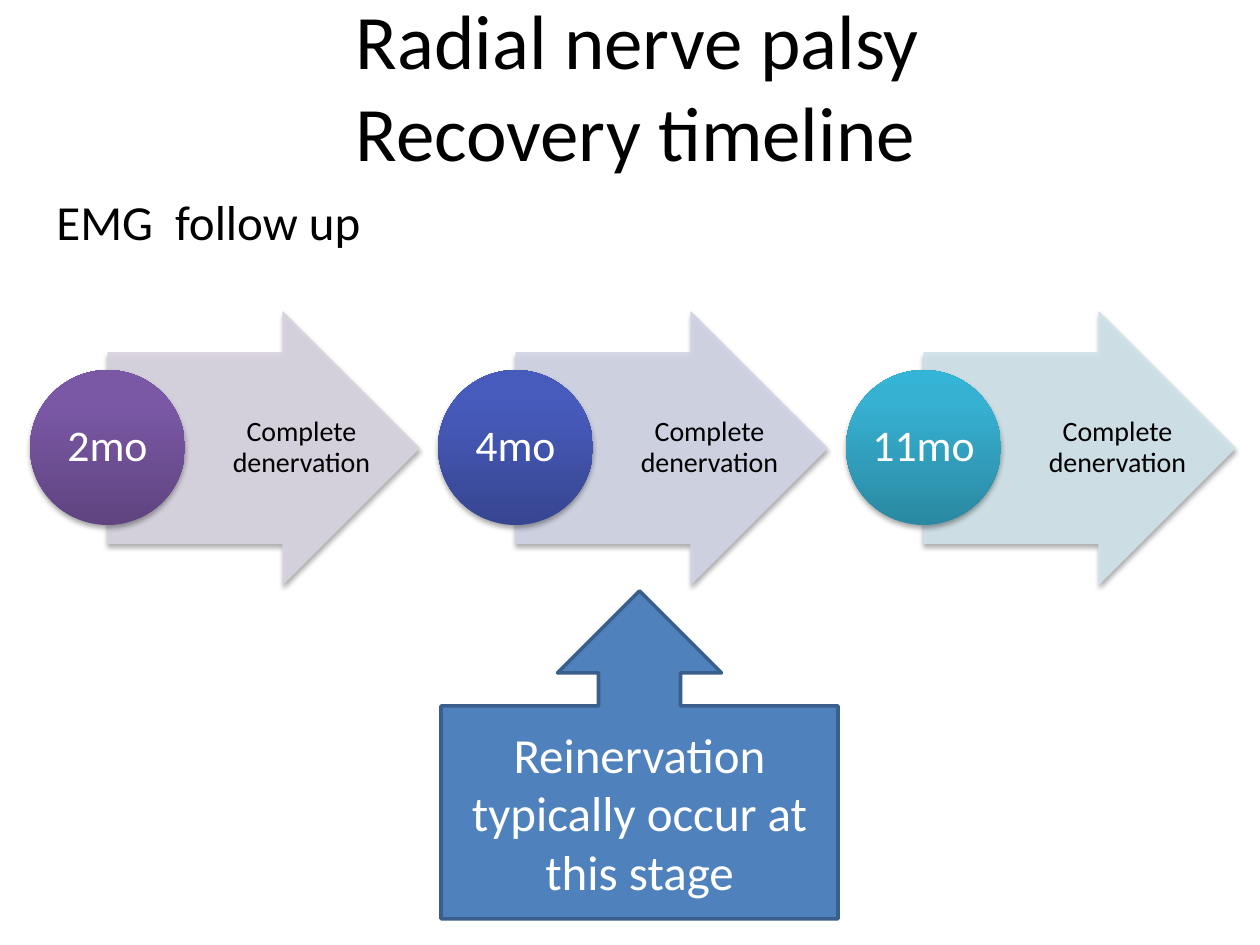
from dataclasses import dataclass
from lxml import etree
from pptx import Presentation
from pptx.dml.color import RGBColor as Rgb
from pptx.enum.shapes import MSO_SHAPE as Shape
from pptx.enum.text import MSO_ANCHOR as Anchor, MSO_AUTO_SIZE as AutoSize, PP_ALIGN as Align
from pptx.oxml import parse_xml
from pptx.util import Inches, Pt

PX = Inches(1) / 126
NS = 'xmlns:a="http://schemas.openxmlformats.org/drawingml/2006/main"'


@dataclass(frozen=True)
class Theme:
    font: str = "Calibri"
    dark: str = "000000"
    light: str = "FFFFFF"
    callout: str = "4F81BD"
    callout_edge: str = "3A5F8C"
    title: int = 44
    body: int = 28
    month: int = 25
    finding: int = 16


theme = Theme()
# month, finding, arrow colour, circle gradient from bottom to top
stages = [
    ("2mo", "Complete denervation", "D8D3E0", ("5F4480", "7B58A6", "7C57A8")),
    ("4mo", "Complete denervation", "D1D4E5", ("374691", "475BBC", "455ABF")),
    ("11mo", "Complete denervation", "D0E3EA", ("2A88A2", "37B1D2", "34B4D6")),
]


def px(*lengths):
    return [round(length * PX) for length in lengths]


def write(shape, text, size, color, align=Align.CENTER, anchor=Anchor.MIDDLE,
          wrap=True, inset=None, spacing=None):
    frame = shape.text_frame
    frame.text = text
    frame.word_wrap = wrap
    frame.auto_size = AutoSize.NONE
    frame.vertical_anchor = anchor
    if inset is not None:
        frame.margin_left = frame.margin_right = px(inset)[0]
        frame.margin_top = frame.margin_bottom = px(inset)[0]
    for para in frame.paragraphs:
        para.alignment = align
        para.line_spacing = spacing
        for span in para.runs:
            span.font.name = theme.font
            span.font.size = Pt(size)
            span.font.color.rgb = Rgb.from_string(color)


deck = Presentation()
deck.slide_width, deck.slide_height = Inches(10), Inches(7.5)
page = deck.slides.add_slide(deck.slide_layouts[5])
shapes = page.shapes

# Title
title = shapes.title
title.left, title.top, title.width, title.height = px(343, -14, 612, 199)
write(title, "Radial nerve palsy\nRecovery timeline", theme.title, theme.dark,
      Align.LEFT, Anchor.TOP, wrap=False)

# Timeline: an arrow, its finding and a month circle per stage
for index, (month, finding, pale, stops) in enumerate(stages):
    left = 30 + index * 408
    arrow = shapes.add_shape(Shape.RIGHT_ARROW, *px(left + 78, 312, 311, 272))
    arrow.adjustments[0], arrow.adjustments[1] = 0.7, 0.5
    arrow.fill.solid()
    arrow.fill.fore_color.rgb = Rgb.from_string(pale)
    arrow.line.color.rgb = Rgb.from_string(pale)
    arrow.line.width = Pt(0.75)
    for color in arrow.element.spPr.iter("{*}srgbClr"):
        color.append(parse_xml(f'<a:alpha {NS} val="90000"/>'))

    label = shapes.add_textbox(*px(left + 155, 312, 233, 272))
    write(label, finding, theme.finding, theme.dark, inset=4, spacing=0.9)

    circle = shapes.add_shape(Shape.OVAL, *px(left, 370, 155, 155))
    circle.line.fill.background()
    circle.fill.gradient()
    gradient = circle.element.spPr.find("{*}gradFill")
    stop_list = "".join(
        f'<a:gs pos="{place}000"><a:srgbClr val="{color}"/></a:gs>'
        for place, color in zip((0, 80, 100), stops))
    gradient.getparent().replace(gradient, parse_xml(
        f'<a:gradFill {NS} rotWithShape="1"><a:gsLst>{stop_list}</a:gsLst>'
        '<a:lin ang="16200000" scaled="0"/></a:gradFill>'))
    write(circle, month, theme.month, theme.light, wrap=False, inset=2, spacing=0.9)

    # Soft shadow below both shapes
    for shape in (arrow, circle):
        shape.shadow.inherit = False
        effects = shape.element.spPr.find("{*}effectLst")
        effects.append(parse_xml(
            f'<a:outerShdw {NS} blurRad="{Pt(3.1)}" dist="{Pt(1.8)}" dir="5400000" '
            'rotWithShape="0"><a:srgbClr val="000000"><a:alpha val="35000"/>'
            '</a:srgbClr></a:outerShdw>'))

# Heading above the timeline
heading = shapes.add_textbox(*px(44, 185, 333, 72))
write(heading, "EMG  follow up", theme.body, theme.dark, Align.LEFT, Anchor.TOP, wrap=False)

# Callout pointing at the middle stage
callout = shapes.add_shape(Shape.UP_ARROW_CALLOUT, *px(441, 591, 397, 328))
callout.shadow.inherit = False
callout.fill.solid()
callout.fill.fore_color.rgb = Rgb.from_string(theme.callout)
callout.line.color.rgb = Rgb.from_string(theme.callout_edge)
callout.line.width = Pt(2)
write(callout, "Reinervation typically occur at this stage", theme.body, theme.light)

deck.save("out.pptx")
